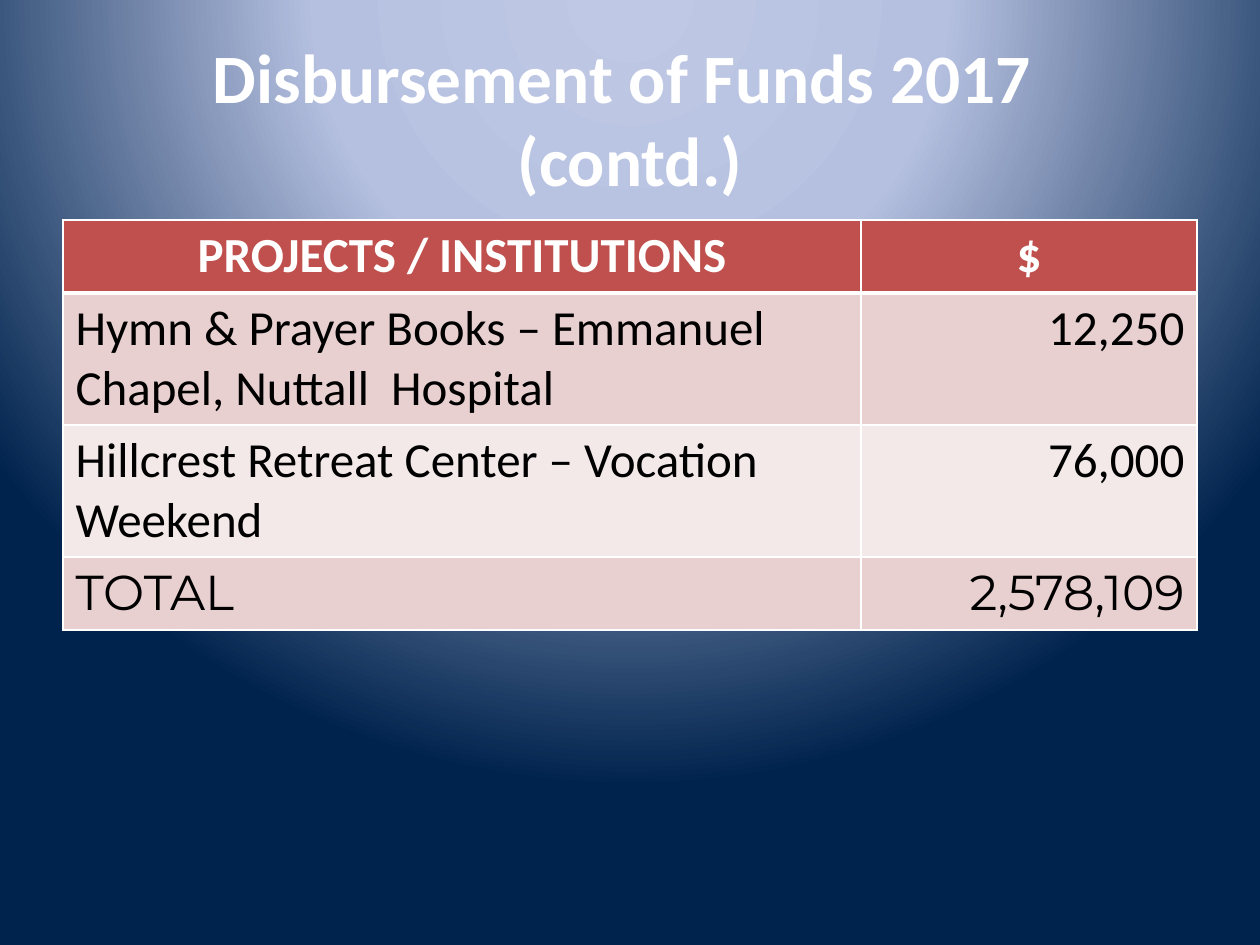
from lxml import etree
from pptx import Presentation
from pptx.dml.color import RGBColor
from pptx.enum.text import MSO_ANCHOR, PP_ALIGN
from pptx.oxml.ns import qn
from pptx.util import Pt

LEFT, MID, RIGHT = PP_ALIGN.LEFT, PP_ALIGN.CENTER, PP_ALIGN.RIGHT
CENTER = MSO_ANCHOR.MIDDLE
PX = 914400 / 126
THEME = {
    "white": "FFFFFF", "black": "000000", "head": "C0504D",
    "bands": ["F4E9E9", "E8D0D0"],
    "glow": [(0, "BFC9E5"), (40, "B5C0E0"), (100, "00234D")],
    "body": "Calibri", "total": "Montserrat",
    "title": 39.6, "text": 28,
}


def px(n):
    return round(n * PX)


def style(para, size, face, color, bold, align):
    para.alignment = align
    font = para.font
    font.size, font.name, font.bold = Pt(size), face, bold
    font.color.rgb = RGBColor.from_string(color)


deck = Presentation()
deck.slide_width, deck.slide_height = px(1260), px(945)
slide = deck.slides.add_slide(deck.slide_layouts[6])

fill = slide.background.fill
fill.gradient()
grad = slide.background._cSld.find(".//" + qn("a:gradFill"))
for part in list(grad):
    grad.remove(part)
stops = etree.SubElement(grad, qn("a:gsLst"))
for pos, color in THEME["glow"]:
    stop = etree.SubElement(stops, qn("a:gs"), pos=str(pos * 1000))
    etree.SubElement(stop, qn("a:srgbClr"), val=color)
ring = etree.SubElement(grad, qn("a:path"), path="circle")
etree.SubElement(ring, qn("a:fillToRect"), l="50000", t="-80000", r="50000", b="180000")

title = slide.shapes.add_textbox(px(63), px(38), px(1134), px(158)).text_frame
title.word_wrap = True
title.vertical_anchor = CENTER
title.text = "Disbursement of Funds 2017 \v(contd.)"
style(title.paragraphs[0], THEME["title"], THEME["body"], THEME["white"], True, MID)

rows = [
    ("PROJECTS / INSTITUTIONS", "$"),
    ("Hymn & Prayer Books – Emmanuel Chapel, Nuttall  Hospital", "12,250"),
    ("Hillcrest Retreat Center – Vocation Weekend", "76,000"),
    ("TOTAL", "2,578,109"),
]
widths = [798, 336]
heights = [73, 132, 132, 73]
table = slide.shapes.add_table(
    len(rows), len(widths), px(63), px(220), px(sum(widths)), px(sum(heights))
).table
for col, width in zip(table.columns, widths):
    col.width = px(width)

for r, row in enumerate(rows):
    table.rows[r].height = px(heights[r])
    head = r == 0
    face = THEME["total"] if r == len(rows) - 1 else THEME["body"]
    ink = THEME["white"] if head else THEME["black"]
    back = THEME["head"] if head else THEME["bands"][r % 2]
    for c, text in enumerate(row):
        cell = table.cell(r, c)
        cell.text = text
        align = MID if head else (LEFT, RIGHT)[c]
        style(cell.text_frame.paragraphs[0], THEME["text"], face, ink, head, align)
        cell.fill.solid()
        cell.fill.fore_color.rgb = RGBColor.from_string(back)
        props = cell._tc.get_or_add_tcPr()
        for i, side in enumerate("LRTB"):
            thick = 3 if (r, side) in [(0, "B"), (1, "T")] else 1
            line = etree.Element(qn("a:ln" + side), w=str(Pt(thick)))
            solid = etree.SubElement(line, qn("a:solidFill"))
            etree.SubElement(solid, qn("a:srgbClr"), val=THEME["white"])
            props.insert(i, line)

deck.save("out.pptx")
